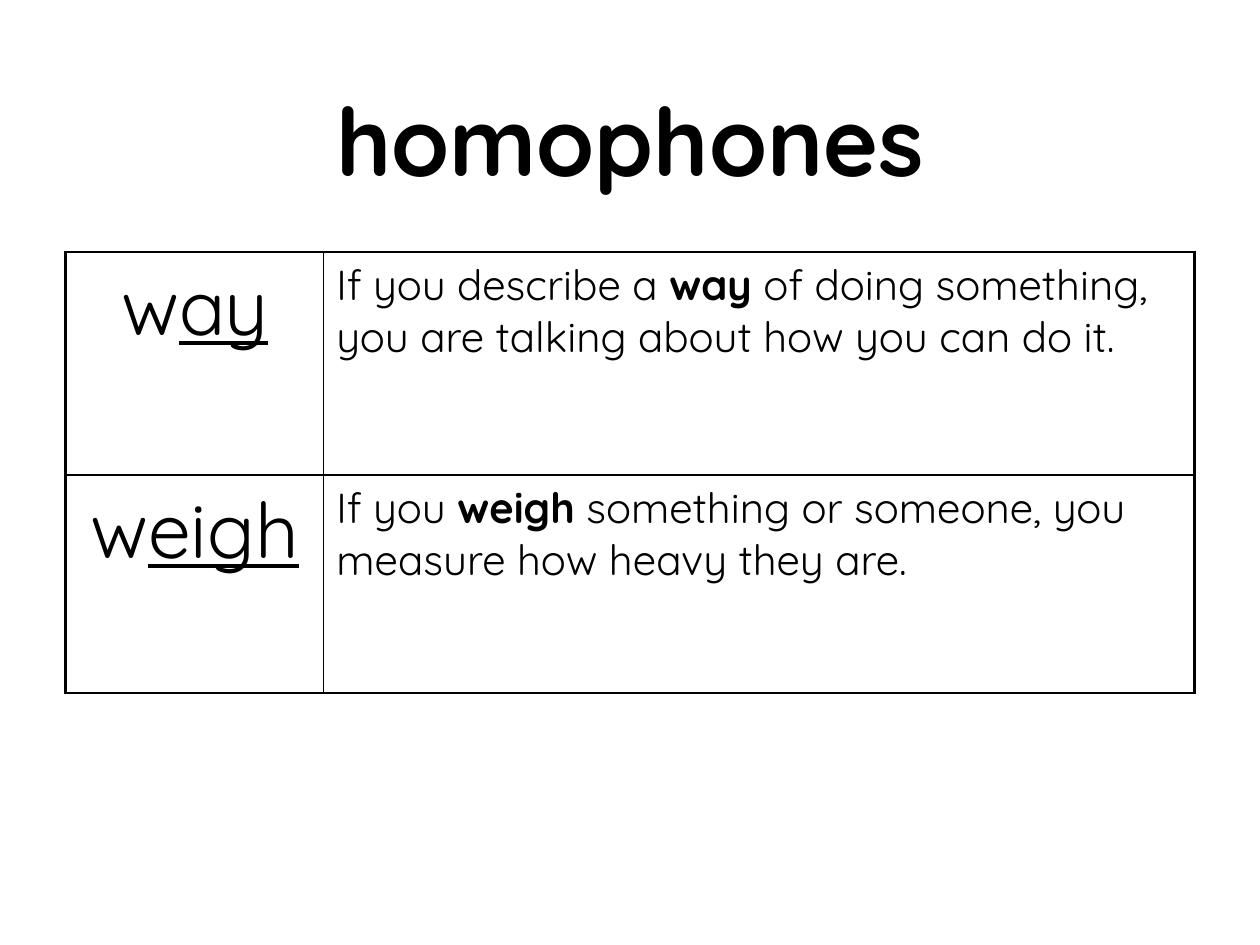
from lxml import etree
from pptx import Presentation
from pptx.dml.color import RGBColor
from pptx.enum.text import MSO_ANCHOR, PP_ALIGN
from pptx.oxml.ns import qn
from pptx.util import Inches, Pt

BLACK = RGBColor(0, 0, 0)
FONT = "Quicksand"
LEFT, CENTER = PP_ALIGN.LEFT, PP_ALIGN.CENTER
TOP = MSO_ANCHOR.TOP

COLS = [2.05, 6.91]
ROWS = [1.77, 1.73]
THICK, THIN = Pt(1.5), Pt(0.75)

# Each row: plain start and underlined end of the word,
# then its meaning as text before, bold word, text after
WORDS = [
    (("w", "ay"),
     ("If you describe a ", "way",
      " of doing something, you are talking about how you can do it.")),
    (("w", "eigh"),
     ("If you ", "weigh",
      " something or someone, you measure how heavy they are.")),
]


def add_run(para, text, size, bold=False, under=False):
    run = para.add_run()
    run.text = text
    font = run.font
    font.name, font.size = FONT, Pt(size)
    font.bold, font.underline = bold, under
    font.color.rgb = BLACK


def add_title(slide, text):
    box = slide.shapes.add_textbox(Inches(0), Inches(0.7), Inches(10), Inches(1.45))
    frame = box.text_frame
    frame.word_wrap = True
    frame.vertical_anchor = TOP
    para = frame.paragraphs[0]
    para.alignment = CENTER
    para.line_spacing = 0.9
    add_run(para, text, 54, bold=True)


def set_edge(cell, side, width):
    line = etree.SubElement(cell._tc.get_or_add_tcPr(), qn("a:ln" + side), w=str(width))
    fill = etree.SubElement(line, qn("a:solidFill"))
    etree.SubElement(fill, qn("a:srgbClr"), val=str(BLACK))


def style_cell(cell, row, col):
    # Thick lines around the table, thin lines inside
    outer = {"L": col == 0, "R": col == len(COLS) - 1,
             "T": row == 0, "B": row == len(ROWS) - 1}
    for side, edge in outer.items():
        set_edge(cell, side, THICK if edge else THIN)
    cell.fill.background()
    cell.vertical_anchor = TOP


def add_words(slide):
    frame = slide.shapes.add_table(
        len(ROWS), len(COLS), Inches(0.52), Inches(2),
        Inches(sum(COLS)), Inches(sum(ROWS)))
    table = frame.table
    table.first_row = table.horz_banding = False
    for col, width in zip(table.columns, COLS):
        col.width = Inches(width)
    for row, height in zip(table.rows, ROWS):
        row.height = Inches(height)

    for i, ((start, end), (before, word, after)) in enumerate(WORDS):
        for j in range(len(COLS)):
            style_cell(table.cell(i, j), i, j)

        # Word with its spelling pattern underlined
        para = table.cell(i, 0).text_frame.paragraphs[0]
        para.alignment = CENTER
        add_run(para, start, 44)
        add_run(para, end, 44, under=True)

        # Meaning with the word in bold
        para = table.cell(i, 1).text_frame.paragraphs[0]
        para.alignment = LEFT
        add_run(para, before, 24)
        add_run(para, word, 24, bold=True)
        add_run(para, after, 24)


def main():
    deck = Presentation()
    deck.slide_width, deck.slide_height = Inches(10), Inches(7.5)
    slide = deck.slides.add_slide(deck.slide_layouts[6])
    add_words(slide)
    add_title(slide, "homophones")
    deck.save("out.pptx")


if __name__ == "__main__":
    main()
